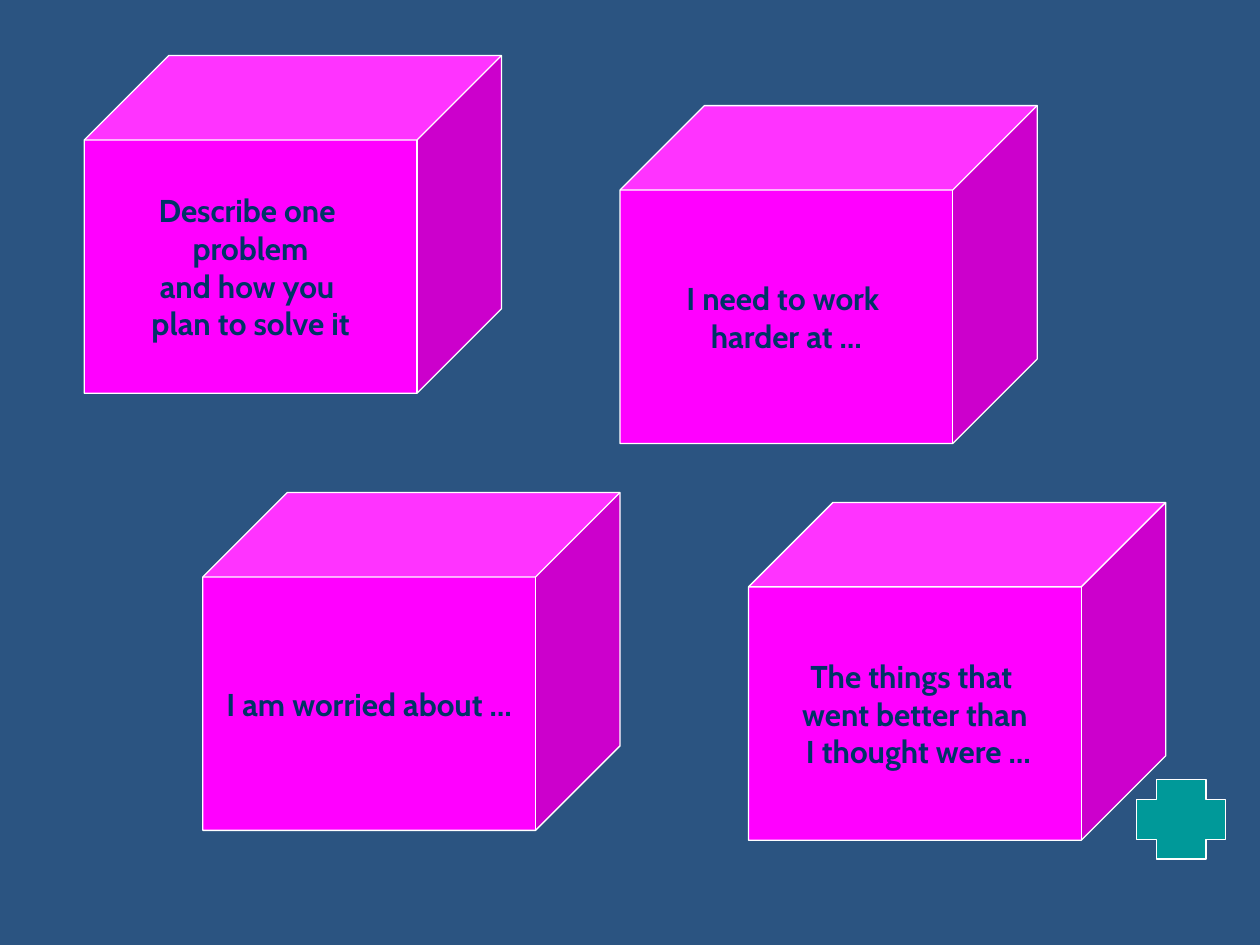
"""Build a reflection slide with four prompt cubes and a plus sign."""
from dataclasses import dataclass

from pptx import Presentation
from pptx.dml.color import RGBColor
from pptx.enum.shapes import MSO_SHAPE
from pptx.enum.text import MSO_ANCHOR, PP_ALIGN
from pptx.util import Cm, Pt


@dataclass(frozen=True)
class Theme:
    background: RGBColor = RGBColor(0x2B, 0x54, 0x81)
    cube: RGBColor = RGBColor(0xFF, 0x00, 0xFF)
    plus: RGBColor = RGBColor(0x00, 0x99, 0x99)
    outline: RGBColor = RGBColor(0xFF, 0xFF, 0xFF)
    text: RGBColor = RGBColor(0x00, 0x33, 0x66)
    font: str = "Cabin"
    text_size: Pt = Pt(18)
    outline_width: Pt = Pt(0.75)


theme = Theme()


def add_outlined_shape(page, kind, left, top, width, height, color):
    shape = page.shapes.add_shape(kind, Cm(left), Cm(top), Cm(width), Cm(height))
    shape.adjustments[0] = 0.25
    shape.shadow.inherit = False
    shape.fill.solid()
    shape.fill.fore_color.rgb = color
    shape.line.color.rgb = theme.outline
    shape.line.width = theme.outline_width
    return shape


deck = Presentation()
deck.slide_width = Cm(25.4)
deck.slide_height = Cm(19.05)
page = deck.slides.add_slide(deck.slide_layouts[6])
page.background.fill.solid()
page.background.fill.fore_color.rgb = theme.background

prompts = [
    (12.5, 2.13, "I need to work \nharder at …"),
    (15.09, 10.13, "The things that \nwent better than\n I thought were …"),
    (4.09, 9.93, "I am worried about …"),
    (1.7, 1.12, "Describe one \nproblem\nand how you \nplan to solve it"),
]
for left, top, prompt in prompts:
    cube = add_outlined_shape(page, MSO_SHAPE.CUBE, left, top, 8.41, 6.81, theme.cube)
    frame = cube.text_frame
    frame.word_wrap = False
    frame.vertical_anchor = MSO_ANCHOR.MIDDLE
    frame.text = prompt
    for para in frame.paragraphs:
        para.alignment = PP_ALIGN.CENTER
        for span in para.runs:
            span.font.name = theme.font
            span.font.size = theme.text_size
            span.font.bold = True
            span.font.color.rgb = theme.text

add_outlined_shape(page, MSO_SHAPE.CROSS, 22.91, 15.72, 1.8, 1.6, theme.plus)

deck.save("out.pptx")
